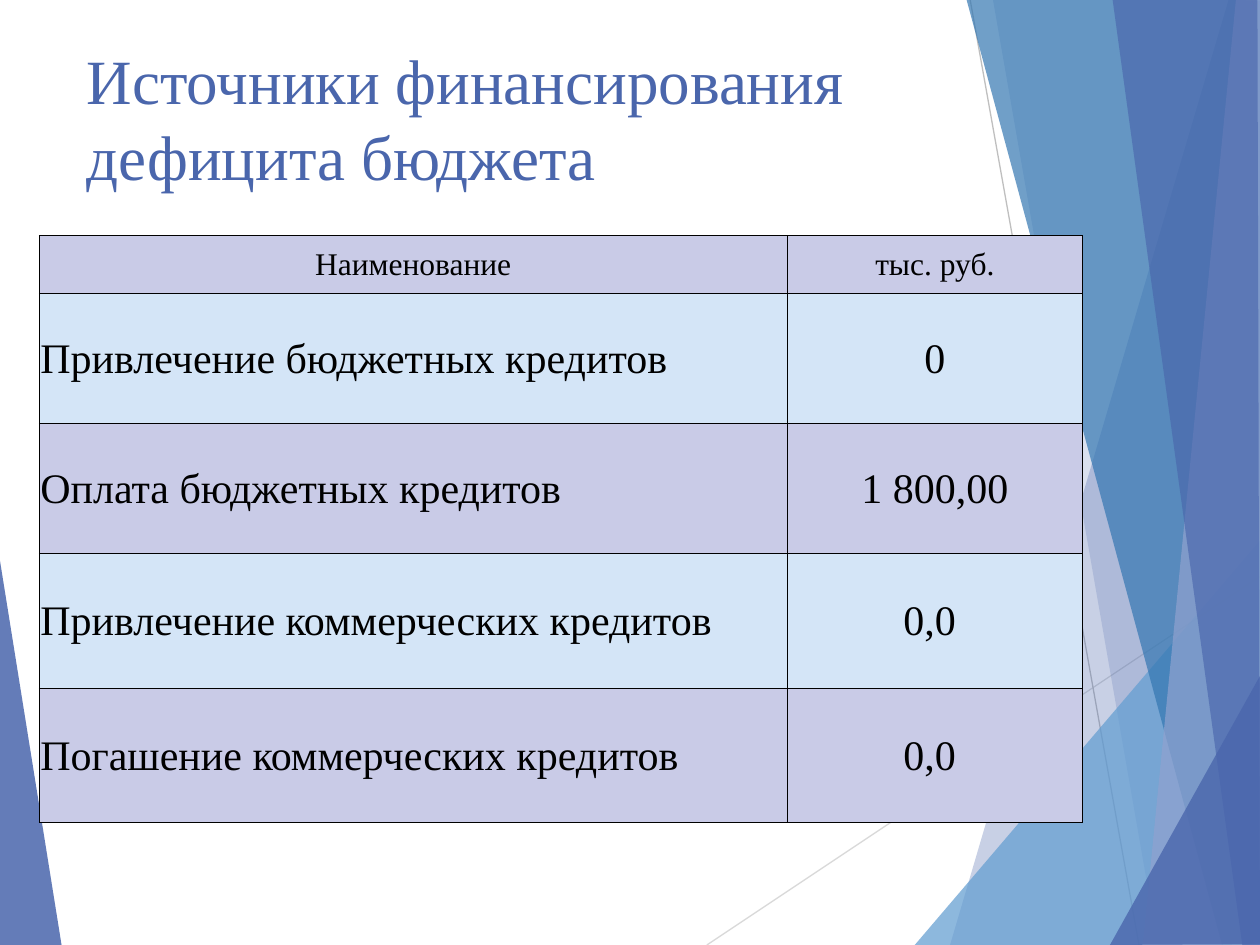
from lxml import etree
from pptx import Presentation
from pptx.dml.color import RGBColor
from pptx.enum.shapes import MSO_CONNECTOR
from pptx.enum.text import MSO_ANCHOR, PP_ALIGN
from pptx.oxml.ns import qn
from pptx.util import Inches, Pt

LEFT, CENTER = PP_ALIGN.LEFT, PP_ALIGN.CENTER
MIDDLE = MSO_ANCHOR.MIDDLE
STRAIGHT = MSO_CONNECTOR.STRAIGHT
FONT = "Times New Roman"
BLUE, BLACK = "4A66AC", "000000"
LILAC, SKY = "C9CBE7", "D4E5F7"
UNITS = 1000  # points are given in thousandths of the slide's sides

# from, to, colour
THIN_LINES = [
    ((561, 1000), (1001, 609), "D9D9D9"),
    ((770, 0), (904, 1000), "BFBFBF"),
]
# corners, colour, opacity in percent
FACETS = [
    ([(-1, 585), (49, 1001), (-1, 1000)], BLUE, 85),
    ([(975, 0), (754, 1000), (1002, 1001), (1001, 1)], BLUE, 30),
    ([(788, -1), (919, 1000), (1001, 1000), (1001, -1)], BLUE, 20),
    ([(726, 1000), (1000, 572), (1001, 1000)], "629DD1", 72),
    ([(767, -1), (970, 1000), (1001, 999), (1001, -1)], "3477B2", 70),
    ([(981, -1), (907, 1000), (1001, 1000), (1000, -1)], "90A2CF", 70),
    ([(883, -1), (986, 1000), (1000, 1000), (998, -1)], BLUE, 65),
    ([(881, 1000), (1001, 713), (1001, 999)], BLUE, 80),
]
TABLE_ROWS = [
    ("Наименование", "тыс. руб."),
    ("Привлечение бюджетных кредитов", "0"),
    ("Оплата бюджетных кредитов", "1 800,00"),
    ("Привлечение коммерческих кредитов", "0,0 "),
    ("Погашение коммерческих кредитов", "0,0 "),
]
COLUMN_WIDTHS = [5.94, 2.34]
ROW_HEIGHTS = [0.46, 1.03, 1.03, 1.07, 1.07]
CELL_FORMAT = {
    "vertical_anchor": MIDDLE,
    "margin_left": Inches(0.01),
    "margin_right": Inches(0.01),
    "margin_top": Inches(0.01),
    "margin_bottom": 0,
}


def rgb(color):
    return RGBColor.from_string(color)


def set_attributes(target, values):
    for name, value in values.items():
        setattr(target, name, value)


def set_fill(target, color):
    target.fill.solid()
    target.fill.fore_color.rgb = rgb(color)


def write(text_frame, text, size, color, alignment=LEFT):
    paragraph = text_frame.paragraphs[0]
    paragraph.alignment = alignment
    run = paragraph.add_run()
    run.text = text
    set_attributes(run.font, {"name": FONT, "size": Pt(size)})
    run.font.color.rgb = rgb(color)


def add_facet(slide, corners, color, opacity, scale):
    builder = slide.shapes.build_freeform(*corners[0], scale=scale)
    builder.add_line_segments(corners[1:], close=True)
    shape = builder.convert_to_shape()
    shape.shadow.inherit = False
    set_fill(shape, color)
    shape.line.fill.background()
    color_element = shape.element.spPr.find(f"{qn('a:solidFill')}/{qn('a:srgbClr')}")
    etree.SubElement(color_element, qn("a:alpha"), val=str(opacity * 1000))


def add_thin_line(slide, start, end, color, scale):
    ends = [share * unit for point in (start, end) for share, unit in zip(point, scale)]
    connector = slide.shapes.add_connector(STRAIGHT, *map(round, ends))
    connector.line.color.rgb = rgb(color)
    connector.line.width = Pt(0.75)
    etree.SubElement(connector.element.spPr, qn("a:effectLst"))


def add_backdrop(slide, width, height):
    scale = (width / UNITS, height / UNITS)
    for start, end, color in THIN_LINES:
        add_thin_line(slide, start, end, color, scale)
    for corners, color, opacity in FACETS:
        add_facet(slide, corners, color, opacity, scale)


def add_title(slide, box):
    frame = slide.shapes.add_textbox(*box).text_frame
    set_attributes(frame, {"word_wrap": True, "vertical_anchor": MIDDLE})
    write(frame, "Источники финансирования дефицита бюджета", 36, BLUE)


def set_borders(cell):
    properties = cell._tc.get_or_add_tcPr()
    for position, side in enumerate(("lnL", "lnR", "lnT", "lnB")):
        border = etree.Element(qn(f"a:{side}"), w=str(Pt(0.25)))
        fill = etree.SubElement(border, qn("a:solidFill"))
        etree.SubElement(fill, qn("a:srgbClr"), val=BLACK)
        properties.insert(position, border)


def add_finance_table(slide, box):
    frame = slide.shapes.add_table(len(ROW_HEIGHTS), len(COLUMN_WIDTHS), *box)
    table = frame.table
    for column, width in zip(table.columns, COLUMN_WIDTHS):
        column.width = Inches(width)
    for row, height in zip(table.rows, ROW_HEIGHTS):
        row.height = Inches(height)
    for row_index, texts in enumerate(TABLE_ROWS):
        is_header = row_index == 0
        for column_index, text in enumerate(texts):
            cell = table.cell(row_index, column_index)
            set_attributes(cell, CELL_FORMAT)
            set_fill(cell, SKY if row_index % 2 else LILAC)
            set_borders(cell)
            alignment = CENTER if is_header or column_index else LEFT
            write(cell.text_frame, text, 18 if is_header else 24, BLACK, alignment)


def main():
    presentation = Presentation()
    width, height = Inches(10), Inches(7.5)
    set_attributes(presentation, {"slide_width": width, "slide_height": height})
    slide = presentation.slides.add_slide(presentation.slide_layouts[6])
    add_backdrop(slide, width, height)
    add_title(slide, [Inches(length) for length in (0.59, 0.21, 6.94, 1.44)])
    table_box = (0.31, 1.87, sum(COLUMN_WIDTHS), sum(ROW_HEIGHTS))
    add_finance_table(slide, [Inches(length) for length in table_box])
    presentation.save("out.pptx")


if __name__ == "__main__":
    main()
